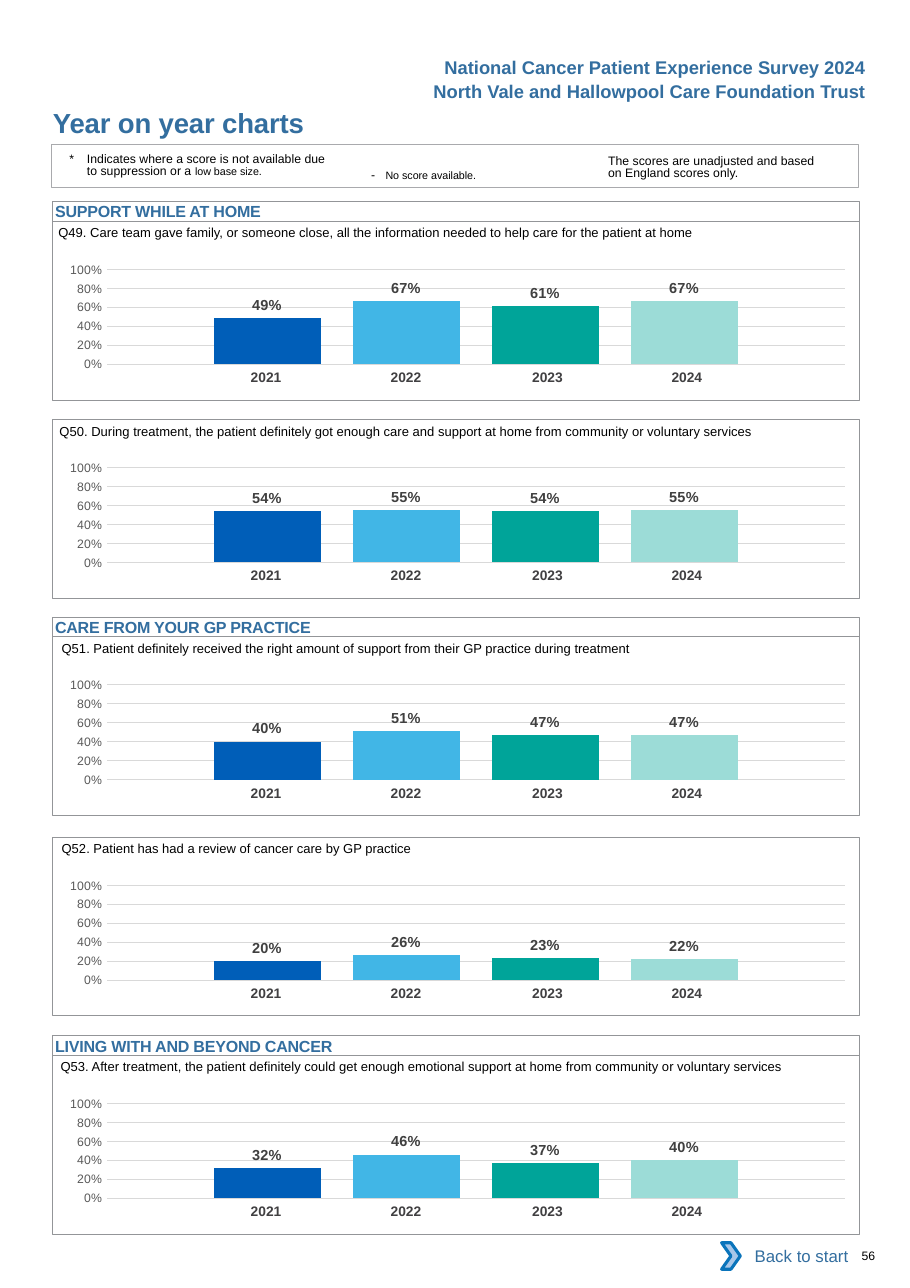
from lxml import etree
from pptx import Presentation
from pptx.chart.data import CategoryChartData
from pptx.dml.color import RGBColor
from pptx.enum.chart import XL_CHART_TYPE, XL_LABEL_POSITION, XL_TICK_MARK
from pptx.enum.shapes import MSO_SHAPE
from pptx.enum.text import MSO_ANCHOR, PP_ALIGN
from pptx.oxml.ns import qn
from pptx.util import Inches, Pt

RECT, CHEVRON = MSO_SHAPE.RECTANGLE, MSO_SHAPE.CHEVRON
TOP, MIDDLE = MSO_ANCHOR.TOP, MSO_ANCHOR.MIDDLE
LEFT, CENTER, RIGHT = PP_ALIGN.LEFT, PP_ALIGN.CENTER, PP_ALIGN.RIGHT
BLUE, BLACK, GREY = "336E9F", "000000", "939598"
NO_TABLE_STYLE = "{2D5ABB26-0587-4C30-8999-92F81FD0307C}"

# Content
TITLE = "Year on year charts"
HEADERS = [  # top, text
    (0.46, "National Cancer Patient Experience Survey 2024"),
    (0.68, "North Vale and Hallowpool Care Foundation Trust"),
]
NOTES = [  # left, top, width, hanging indent, runs of (text, size)
    (0.63, 1.36, 2.37, 0.16, [
        ("*\tIndicates where a score is not available due to suppression or a ", 8),
        ("low base size.", 7)]),
    (3.37, 1.51, 1.6, 0.13, [("-\t", 8), ("No score available.", 7)]),
    (5.52, 1.38, 2.01, 0, [
        ("The scores are unadjusted and based on England scores only.", 8)]),
]
YEARS = ["2021", "2022", "2023", "2024"]
YEAR_COLORS = ["005EB8", "41B6E6", "00A499", "9CDCD7"]
YEAR_WIDTHS = [1.27, 1.27, 1.34, 1.27]
YEAR_MARGINS = [0, 0, 0.04, 0.12]
PANELS = [  # frame top, section heading, question left, question, scores
    (2.01, "SUPPORT WHILE AT HOME", 0.53,
     "Q49. Care team gave family, or someone close, all the information needed "
     "to help care for the patient at home", [0.49, 0.67, 0.61, 0.67]),
    (3.81, None, 0.54,
     "Q50. During treatment, the patient definitely got enough care and support "
     "at home from community or voluntary services", [0.54, 0.55, 0.54, 0.55]),
    (5.78, "CARE FROM YOUR GP PRACTICE", 0.56,
     "Q51. Patient definitely received the right amount of support from their "
     "GP practice during treatment", [0.40, 0.51, 0.47, 0.47]),
    (7.60, None, 0.56,
     "Q52. Patient has had a review of cancer care by GP practice",
     [0.20, 0.26, 0.23, 0.22]),
    (9.58, "LIVING WITH AND BEYOND CANCER", 0.55,
     "Q53. After treatment, the patient definitely could get enough emotional "
     "support at home from community or voluntary services",
     [0.32, 0.46, 0.37, 0.40]),
]
FRAME_LEFT, FRAME_W, FRAME_H = 0.48, 7.32, 1.62


def rgb(value):
    return RGBColor.from_string(value)


def style(font, size, color, bold=False):
    font.name, font.size, font.bold = "Arial", Pt(size), bold
    font.color.rgb = rgb(color)


def frame_text(tf, inset=0, anchor=TOP, wrap=True):
    tf.word_wrap, tf.vertical_anchor = wrap, anchor
    tf.margin_left = tf.margin_right = Inches(inset)
    tf.margin_top = tf.margin_bottom = 0


def write(tf, text, size, color, bold=False, align=LEFT, spc=0):
    p = tf.paragraphs[0]
    p.text, p.alignment = text, align
    for r in p.runs:
        style(r.font, size, color, bold)
        if spc:
            r.font._element.set("spc", str(spc))


def add_text(s, x, y, w, h, text, size, color, **options):
    tf = s.shapes.add_textbox(*map(Inches, (x, y, w, h))).text_frame
    frame_text(tf)
    write(tf, text, size, color, **options)


def add_box(s, kind, x, y, w, h, line=None, weight=0.5, fill=None):
    sp = s.shapes.add_shape(kind, *map(Inches, (x, y, w, h)))
    sp.shadow.inherit = False
    if fill:
        sp.fill.solid()
        sp.fill.fore_color.rgb = rgb(fill)
    else:
        sp.fill.background()
    if line:
        sp.line.color.rgb, sp.line.width = rgb(line), Pt(weight)
    else:
        sp.line.fill.background()
    return sp


def add_years(s, y):
    table = s.shapes.add_table(1, len(YEARS), Inches(1.73), Inches(y),
                               Inches(sum(YEAR_WIDTHS)), Inches(0.27)).table
    table.first_row = table.horz_banding = False
    table._tbl.tblPr.find(qn("a:tableStyleId")).text = NO_TABLE_STYLE
    for i, year in enumerate(YEARS):
        table.columns[i].width = Inches(YEAR_WIDTHS[i])
        cell = table.cell(0, i)
        cell.fill.background()
        cell.margin_left, cell.margin_right = Inches(0.1), Inches(YEAR_MARGINS[i])
        write(cell.text_frame, year, 9, "414042", bold=True, align=CENTER)


def add_scores(s, y, scores):
    data = CategoryChartData(number_format="0%")
    data.categories = ["1"]
    for year, score in zip(YEARS, scores):
        data.add_series(year, [score])
    chart = s.shapes.add_chart(
        XL_CHART_TYPE.COLUMN_CLUSTERED, Inches(0.39), Inches(y),
        Inches(FRAME_W), Inches(1.29), data).chart
    chart.has_legend = chart.has_title = False
    chart.font.name, chart.font.size = "Calibri", Pt(10)
    chart.font.color.rgb = rgb(BLACK)

    # Axes
    chart.category_axis.visible = False
    axis = chart.value_axis
    axis.minimum_scale, axis.maximum_scale, axis.major_unit = 0, 1, 0.2
    axis.major_tick_mark = axis.minor_tick_mark = XL_TICK_MARK.NONE
    axis.format.line.fill.background()
    axis.major_gridlines.format.line.color.rgb = rgb("D9D9D9")
    axis.major_gridlines.format.line.width = Pt(0.75)
    axis.tick_labels.number_format = "0%"
    axis.tick_labels.number_format_is_linked = False
    style(axis.tick_labels.font, 8, "595959")

    # Columns and labels
    plot = chart.plots[0]
    plot.gap_width, plot.overlap, plot.vary_by_categories = 200, -30, False
    for series, color in zip(plot.series, YEAR_COLORS):
        series.format.fill.solid()
        series.format.fill.fore_color.rgb = rgb(color)
        labels = series.data_labels
        labels.show_value, labels.position = True, XL_LABEL_POSITION.OUTSIDE_END
        labels.number_format, labels.number_format_is_linked = "0%", False
        style(labels.font, 9.5, "404040", True)

    # Fixed inner plot area
    area = chart._chartSpace.chart.plotArea
    for old in area.findall(qn("c:layout")):
        area.remove(old)
    layout = etree.Element(qn("c:layout"))
    manual = etree.SubElement(layout, qn("c:manualLayout"))
    for tag, val in [("layoutTarget", "inner"), ("xMode", "edge"), ("yMode", "edge"),
                     ("x", 0.079), ("y", 0.145), ("w", 0.915), ("h", 0.666)]:
        etree.SubElement(manual, qn("c:" + tag)).set("val", str(val))
    area.insert(0, layout)


prs = Presentation()
prs.slide_width, prs.slide_height = Inches(8.26), Inches(11.69)
s = prs.slides.add_slide(prs.slide_layouts[5])

# Title and headers
title = s.shapes.title
title.left, title.top, title.width, title.height = map(Inches, (0.47, 0.96, 4.5, 0.3))
frame_text(title.text_frame, inset=0.01)
write(title.text_frame, TITLE, 18, BLUE, bold=True, spc=-10)
for top, text in HEADERS:
    add_text(s, 3.36, top + 0.05, 4.5, 0.2, text, 12, BLUE, bold=True, align=RIGHT)

# Notes
add_box(s, RECT, 0.47, 1.31, FRAME_W, 0.39, line="A9AAAD", weight=0.75)
for x, y, w, indent, runs in NOTES:
    tf = s.shapes.add_textbox(*map(Inches, (x, y, w, 0.27))).text_frame
    frame_text(tf)
    tf.margin_top = Inches(0.03)
    p = tf.paragraphs[0]
    p.line_spacing = Pt(8.1)
    pPr = p._p.get_or_add_pPr()
    pPr.set("marL", str(Inches(indent)))
    pPr.set("indent", str(-Inches(indent)))
    for text, size in runs:
        r = p.add_run()
        r.text = text
        style(r.font, size, BLACK)

# Question panels
for top, heading, x, question, scores in PANELS:
    if heading:
        sp = add_box(s, RECT, FRAME_LEFT, top - 0.18, FRAME_W, 0.18, line=GREY)
        frame_text(sp.text_frame, inset=0.02, anchor=MIDDLE)
        write(sp.text_frame, heading, 10.5, BLUE, bold=True, spc=-10)
    add_text(s, x, top + 0.03, 7.2, 0.15, question, 8.5, BLACK)
    add_years(s, top + 1.3)
    add_scores(s, top + 0.25, scores)
    add_box(s, RECT, FRAME_LEFT, top, FRAME_W, FRAME_H, line=GREY)

# Footer
back = add_box(s, RECT, 6.62, 11.21, 1.18, 0.38, fill="FFFFFF")
frame_text(back.text_frame, inset=0.1, anchor=MIDDLE)
write(back.text_frame, "Back to start", 11, BLUE, align=RIGHT)
add_box(s, CHEVRON, 6.55, 11.28, 0.17, 0.24, line="0A74BB", weight=2, fill="A8C7E9")
add_text(s, 7.82, 11.33, 0.4, 0.13, "56", 8, BLACK)

prs.save("out.pptx")
